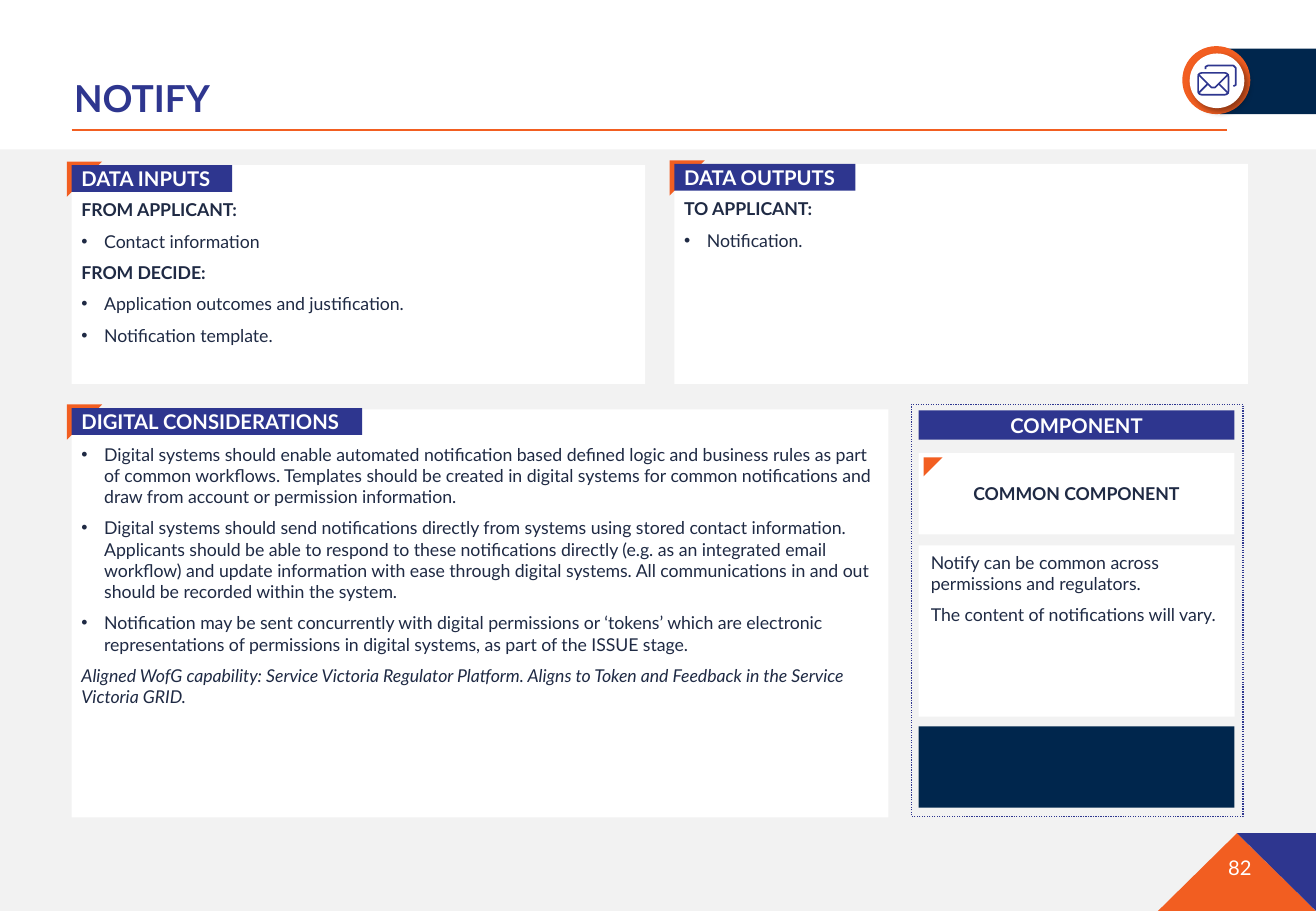
from lxml.etree import SubElement
from pptx import Presentation
from pptx.dml.color import RGBColor
from pptx.enum.dml import MSO_LINE
from pptx.enum.shapes import MSO_CONNECTOR, MSO_SHAPE
from pptx.enum.text import MSO_ANCHOR, MSO_AUTO_SIZE, PP_ALIGN
from pptx.oxml.ns import qn
from pptx.util import Inches, Pt

WHITE = RGBColor(0xFF, 0xFF, 0xFF)
GREY = RGBColor(0xF2, 0xF2, 0xF2)
BLUE = RGBColor(0x2E, 0x36, 0x8F)
NAVY = RGBColor(0x00, 0x26, 0x4D)
ORANGE = RGBColor(0xF2, 0x5E, 0x21)
INK = RGBColor(0x1F, 0x2A, 0x44)

RECT = MSO_SHAPE.RECTANGLE
OVAL = MSO_SHAPE.OVAL
TAB_INSET = (0.08, 0.05, 0.08, 0.05)
CARD_INSET = (0.08, 0.28, 0.08, 0.08)
PLAIN_INSET = (0.1, 0.05, 0.1, 0.05)


def write(frame, text, size=10.5, color=INK, bold=False, italic=False,
          align=PP_ALIGN.LEFT, bullet=False, before=0, spacing=1.0):
    part = frame.paragraphs[0]
    if part.runs:
        part = frame.add_paragraph()
    props = part._p.get_or_add_pPr()
    indent = Pt(13.5) if bullet else 0
    props.set("marL", str(indent))
    props.set("indent", str(-indent))
    if bullet:
        SubElement(props, qn("a:buFont"), typeface="Arial")
        SubElement(props, qn("a:buChar"), char="•")
    else:
        SubElement(props, qn("a:buNone"))
    part.alignment = align
    part.line_spacing = spacing
    part.space_before = Pt(before)
    part.space_after = Pt(0)
    run = part.add_run()
    run.text = text
    font = run.font
    font.name = "Lato"
    font.size = Pt(size)
    font.bold = bold
    font.italic = italic
    font.color.rgb = color


class Board:
    def __init__(self, slide):
        self.slide = slide
        self.shapes = slide.shapes

    def paint(self, shape, fill=None, line=None, width=0.75):
        shape.shadow.inherit = False
        if fill is None:
            shape.fill.background()
        else:
            shape.fill.solid()
            shape.fill.fore_color.rgb = fill
        if line is None:
            shape.line.fill.background()
        else:
            shape.line.color.rgb = line
            shape.line.width = Pt(width)
        return shape

    def block(self, spot, fill=None, kind=RECT, **style):
        shape = self.shapes.add_shape(kind, *map(Inches, spot))
        return self.paint(shape, fill, **style)

    def frame(self, shape, inset=PLAIN_INSET, anchor=MSO_ANCHOR.TOP):
        frame = shape.text_frame
        frame.word_wrap = True
        frame.auto_size = MSO_AUTO_SIZE.NONE
        frame.vertical_anchor = anchor
        (frame.margin_left, frame.margin_top,
         frame.margin_right, frame.margin_bottom) = map(Inches, inset)
        return frame

    def holder(self, index, spot, **layout):
        shape = self.slide.placeholders[index]
        shape.left, shape.top, shape.width, shape.height = map(Inches, spot)
        return shape, self.frame(shape, **layout)

    def card(self, index, spot, items, inset=CARD_INSET):
        shape, frame = self.holder(index, spot, inset=inset)
        shape.fill.solid()
        shape.fill.fore_color.rgb = WHITE
        for rank, (text, style) in enumerate(items):
            write(frame, text, before=6 if rank else 0, **style)

    def label(self, spot, text, fill, inset=TAB_INSET, **style):
        shape = self.block(spot, fill)
        write(self.frame(shape, inset, MSO_ANCHOR.MIDDLE), text, **style)

    def tab(self, left, top, width, text):
        corner = self.block((left - 0.04, top - 0.03, 0.29, 0.29), ORANGE,
                            MSO_SHAPE.HALF_FRAME)
        corner.adjustments[0] = corner.adjustments[1] = 0.238
        self.label((left, top, width, 0.22), text, BLUE,
                   size=12, color=WHITE, bold=True)

    def trace(self, points, close=False, **style):
        first, *rest = [(Inches(x), Inches(y)) for x, y in points]
        maker = self.shapes.build_freeform(*first)
        maker.add_line_segments(rest, close=close)
        return self.paint(maker.convert_to_shape(), **style)

    def rule(self, left, right, top):
        line = self.shapes.add_connector(
            MSO_CONNECTOR.STRAIGHT, Inches(left), Inches(top),
            Inches(right), Inches(top))
        line.line.color.rgb = ORANGE
        line.line.width = Pt(1.25)
        SubElement(line._element.spPr, qn("a:effectLst"))

    def shade(self, shape):
        effects = shape._element.spPr.find(qn("a:effectLst"))
        glow = SubElement(effects, qn("a:outerShdw"), blurRad=str(Pt(4)),
                          dist=str(Pt(3)), dir="2700000", algn="tl")
        color = SubElement(glow, qn("a:srgbClr"), val="000000")
        SubElement(color, qn("a:alpha"), val="40000")


HEAD = {"bold": True}
ITEM = {"bullet": True}
INPUTS = [
    ("FROM APPLICANT:", HEAD),
    ("Contact information", ITEM),
    ("FROM DECIDE:", HEAD),
    ("Application outcomes and justification.", ITEM),
    ("Notification template.", ITEM),
]
OUTPUTS = [("TO APPLICANT:", HEAD), ("Notification.", ITEM)]
DIGITAL = [
    ("Digital systems should enable automated notification based defined "
     "logic and business rules as part of common workflows. Templates should "
     "be created in digital systems for common notifications and draw from "
     "account or permission information.", ITEM),
    ("Digital systems should send notifications directly from systems using "
     "stored contact information. Applicants should be able to respond to "
     "these notifications directly (e.g. as an integrated email workflow) and "
     "update information with ease through digital systems. All "
     "communications in and out should be recorded within the system.", ITEM),
    ("Notification may be sent concurrently with digital permissions or "
     "‘tokens’ which are electronic representations of permissions in digital "
     "systems, as part of the ISSUE stage.", ITEM),
    ("Aligned WofG capability: Service Victoria Regulator Platform. Aligns to "
     "Token and Feedback in the Service Victoria GRID.", {"italic": True}),
]
SCOPE = [
    ("Notify can be common across permissions and regulators.", {}),
    ("The content of notifications will vary.", {}),
]
MAIL = [
    [(9.86, 0.61), (9.97, 0.72), (10, 0.72), (10.11, 0.61)],
    [(9.86, 0.77), (9.94, 0.69)],
    [(10.03, 0.69), (10.11, 0.77)],
    [(9.92, 0.57), (9.92, 0.55), (9.94, 0.54), (10.15, 0.54), (10.17, 0.56),
     (10.17, 0.7), (10.15, 0.71)],
]


def main():
    deck = Presentation()
    deck.slide_width, deck.slide_height = Inches(10.83), Inches(7.5)
    board = Board(deck.slides.add_slide(deck.slide_layouts[4]))

    back = board.block((0, 1.23, 10.83, 6.27), GREY).element
    back.getparent().insert(2, back)

    title = board.holder(0, (0.61, 0.61, 9.65, 0.57),
                         inset=(0, 0.05, 0, 0.05))[1]
    write(title, "NOTIFY", size=22, color=BLUE, bold=True, spacing=0.9)
    board.rule(0.59, 10.1, 1.07)

    board.card(1, (0.59, 1.36, 4.72, 1.8), INPUTS)
    board.card(2, (5.55, 1.35, 4.72, 1.81), OUTPUTS)
    board.card(3, (0.59, 3.37, 6.72, 3.36), DIGITAL)
    board.card(4, (7.56, 4.49, 2.6, 1.41), SCOPE, inset=PLAIN_INSET)
    board.tab(0.59, 1.36, 1.32, "DATA INPUTS")
    board.tab(5.55, 1.35, 1.49, "DATA OUTPUTS")
    board.tab(0.59, 3.36, 2.39, "DIGITAL CONSIDERATIONS")

    border = board.block((7.5, 3.33, 2.73, 3.39), line=BLUE)
    border.line.dash_style = MSO_LINE.ROUND_DOT
    center = PP_ALIGN.CENTER
    board.label((7.56, 3.38, 2.6, 0.24), "COMPONENT", BLUE,
                size=12, color=WHITE, bold=True, align=center)
    board.label((7.56, 3.73, 2.6, 0.67), "COMMON COMPONENT", WHITE,
                PLAIN_INSET, bold=True, align=center)
    board.block((7.56, 5.98, 2.6, 0.67), NAVY)
    flag = board.block((7.53, 3.75, 0.22, 0.11), ORANGE,
                       MSO_SHAPE.ISOSCELES_TRIANGLE)
    flag.rotation = 315

    board.block((10.04, 0.4, 0.79, 0.54), NAVY)
    board.block((9.73, 0.38, 0.56, 0.56), ORANGE, OVAL)
    board.shade(board.block((9.79, 0.44, 0.45, 0.45), WHITE, OVAL))
    board.block((9.86, 0.6, 0.25, 0.18), kind=MSO_SHAPE.ROUNDED_RECTANGLE,
                line=BLUE, width=1)
    for points in MAIL:
        board.trace(points, line=BLUE, width=1)

    board.trace([(10.18, 6.86), (9.53, 7.5), (10.83, 7.5)], True, fill=ORANGE)
    board.trace([(10.83, 6.86), (10.18, 6.86), (10.83, 7.5)], True, fill=BLUE)
    page = board.shapes.add_textbox(*map(Inches, (9.43, 6.99, 0.87, 0.3)))
    write(board.frame(page, (0, 0.05, 0, 0.05)), "82", size=12, color=WHITE,
          align=PP_ALIGN.RIGHT)

    deck.save("out.pptx")


if __name__ == "__main__":
    main()
